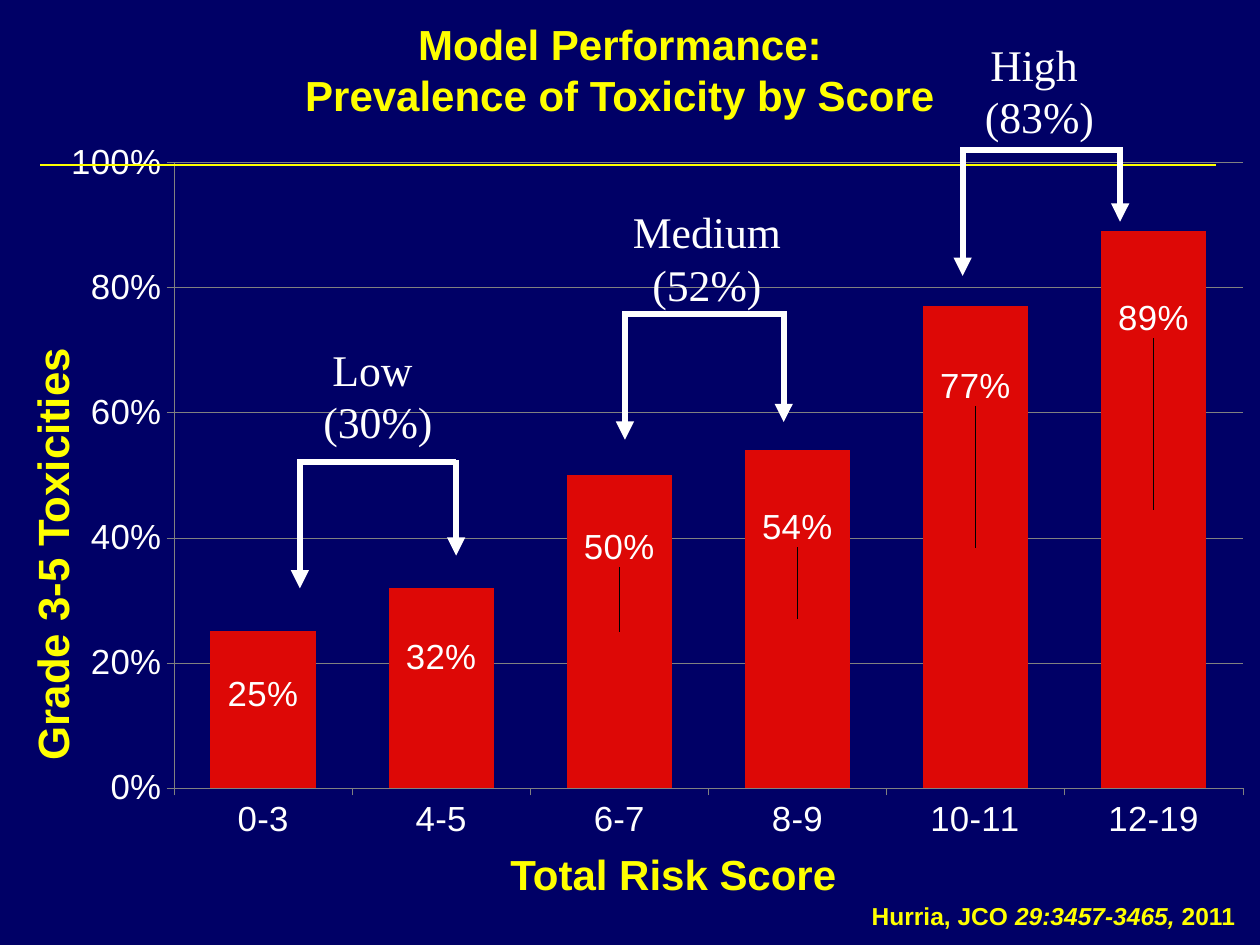
from lxml.etree import SubElement
from pptx import Presentation
from pptx.chart.data import CategoryChartData
from pptx.dml.color import RGBColor
from pptx.enum.chart import XL_CHART_TYPE, XL_LABEL_POSITION, XL_TICK_MARK
from pptx.enum.shapes import MSO_CONNECTOR
from pptx.enum.text import MSO_ANCHOR, MSO_AUTO_SIZE, PP_ALIGN
from pptx.oxml import parse_xml
from pptx.oxml.ns import nsdecls, qn
from pptx.util import Inches, Pt

COLORS = {"back": "000066", "head": "FFFF00", "text": "FFFFFF",
          "bar": "DD0806", "grid": "808080"}
HEAD = {"name": "Arial", "size": Pt(24), "bold": True}
AXIS = {"name": "Arial", "size": Pt(19.9), "bold": False}
RISK = {"name": "Times New Roman", "size": Pt(25)}

# score, share with toxicity, label shift as a share of chart height
SCORES = [("0-3", 0.25, -0.02), ("4-5", 0.32, -0.04), ("6-7", 0.5, -0.11),
          ("8-9", 0.54, -0.12), ("10-11", 0.77, -0.21), ("12-19", 0.89, -0.25)]

# text, text box, bracket corner (left, top), right end, lengths of both arrows
GROUPS = [("Low \v(30%)", (2, 2.67, 2, 0.94), (2.38, 3.67), 3.62, (1, 0.74)),
          ("Medium (52%)", (4.75, 1.58, 1.72, 0.94), (4.96, 2.49), 6.22, (1, 0.86)),
          ("High \v(83%)", (7.25, 0.25, 2, 0.94), (7.64, 1.19), 8.89, (1, 0.57))]


def rgb(key):
    return RGBColor.from_string(COLORS[key])


def style(font, form, color):
    for name, value in form.items():
        setattr(font, name, value)
    font.color.rgb = rgb(color)


def add_text(shapes, box, runs, form, color, align=PP_ALIGN.CENTER, anchor=MSO_ANCHOR.TOP):
    """Add a text box; runs are pairs of text and italic."""
    shape = shapes.add_textbox(*map(Inches, box))
    frame = shape.text_frame
    frame.word_wrap = True
    frame.auto_size = MSO_AUTO_SIZE.SHAPE_TO_FIT_TEXT
    frame.vertical_anchor = anchor
    para = frame.paragraphs[0]
    para.alignment = align
    for text, slant in runs:
        for part, piece in enumerate(text.split("\v")):
            if part:
                para.add_line_break()
            run = para.add_run()
            run.text = piece
            style(run.font, {**form, "italic": slant}, color)
    return shape


def add_line(shapes, start, end, color, width, arrow=False):
    line = shapes.add_connector(MSO_CONNECTOR.STRAIGHT, *map(Inches, (*start, *end)))
    line.line.color.rgb = rgb(color)
    line.line.width = Pt(width)
    if arrow:
        SubElement(line.line._get_or_add_ln(), qn("a:tailEnd"), type="triangle")
    SubElement(line._element.spPr, qn("a:effectLst"))


def layout(target=None, **spots):
    """Make a manual chart layout."""
    inner = f'<c:layoutTarget val="{target}"/>' if target else ""
    if target:
        inner += '<c:xMode val="edge"/><c:yMode val="edge"/>'
    inner += "".join(f'<c:{key} val="{val}"/>' for key, val in spots.items())
    return parse_xml(f'<c:layout {nsdecls("c")}><c:manualLayout>{inner}'
                     '</c:manualLayout></c:layout>')


def add_title(slide, box):
    title = slide.shapes.title
    title.left, title.top, title.width, title.height = map(Inches, box)
    frame = title.text_frame
    frame.text = "Model Performance:\nPrevalence of Toxicity by Score"
    frame.auto_size = MSO_AUTO_SIZE.NONE
    frame.vertical_anchor = MSO_ANCHOR.MIDDLE
    for para in frame.paragraphs:
        para.alignment = PP_ALIGN.CENTER
        style(para.runs[0].font, HEAD, "head")


def add_bars(slide, box):
    data = CategoryChartData(number_format="0%")
    data.categories = [name for name, _, _ in SCORES]
    data.add_series("Series 1", [share for _, share, _ in SCORES])
    chart = slide.shapes.add_chart(XL_CHART_TYPE.COLUMN_STACKED,
                                   *map(Inches, box), data).chart
    chart.has_legend = chart.has_title = False
    style(chart.font, AXIS, "text")
    area = chart._chartSpace.chart.plotArea
    for old in area.findall(qn("c:layout")):
        area.remove(old)
    area.insert(0, layout("inner", x=0.116, y=0.048, w=0.869, h=0.819))

    for axis in (chart.category_axis, chart.value_axis):
        style(axis.tick_labels.font, AXIS, "text")
        axis.major_tick_mark = XL_TICK_MARK.OUTSIDE
        axis.minor_tick_mark = XL_TICK_MARK.NONE
        axis.format.line.color.rgb = rgb("grid")
        axis.format.line.width = Pt(0.25)
    scale = chart.value_axis
    scale.minimum_scale, scale.maximum_scale, scale.major_unit = 0, 1, 0.2
    scale.tick_labels.number_format = "0%"
    scale.tick_labels.number_format_is_linked = False
    grid = scale.major_gridlines.format.line
    grid.color.rgb = rgb("grid")
    grid.width = Pt(0.25)

    plot = chart.plots[0]
    plot.gap_width, plot.overlap, plot.vary_by_categories = 69, 100, False
    bars = plot.series[0]
    bars.format.fill.solid()
    bars.format.fill.fore_color.rgb = rgb("bar")
    labels = bars.data_labels
    labels.show_value = True
    labels.number_format = "0%"
    labels.number_format_is_linked = False
    style(labels.font, AXIS, "text")
    for spot, (_, _, shift) in enumerate(SCORES):
        label = bars.points[spot].data_label
        style(label.font, AXIS, "text")
        label.position = XL_LABEL_POSITION.CENTER
    for item, (_, _, shift) in zip(labels._element.findall(qn("c:dLbl")), SCORES):
        item.insert(1, layout(x=0, y=shift))


def add_group(slide, text, box, corner, right, drops):
    """Add a risk group: its text above a bracket with two arrows."""
    shapes = slide.shapes.add_group_shape().shapes
    left, top = corner
    for x, drop in zip((left, right), drops):
        add_line(shapes, (x, top - 0.02), (x, top + drop), "text", 3.5, True)
    add_line(shapes, (left - 0.02, top), (right, top), "text", 3.5)
    add_text(shapes, box, [(text, False)], RISK, "text")


def main():
    deck = Presentation()
    deck.slide_width, deck.slide_height = Inches(10), Inches(7.5)
    slide = deck.slides.add_slide(deck.slide_layouts[5])
    slide.background.fill.solid()
    slide.background.fill.fore_color.rgb = rgb("back")
    add_bars(slide, (0.25, 1, 9.76, 6.06))
    add_title(slide, (0.42, 0.17, 9, 0.76))
    side = add_text(slide.shapes, (-1.66, 4.09, 4.14, 0.52),
                    [("Grade 3-5 Toxicities ", False)], {**HEAD, "size": Pt(25)},
                    "head", anchor=MSO_ANCHOR.MIDDLE)
    side.rotation = 270
    add_text(slide.shapes, (3.58, 6.67, 3.53, 0.52), [("Total Risk Score", False)],
             HEAD, "head", anchor=MSO_ANCHOR.MIDDLE)
    add_line(slide.shapes, (0.32, 1.31), (9.65, 1.31), "head", 0.75)
    for group in GROUPS:
        add_group(slide, *group)
    add_text(slide.shapes, (6.23, 7.1, 3.67, 0.34),
             [("Hurria, JCO ", False), ("29:3457-3465,", True), (" 2011", False)],
             {**HEAD, "size": Pt(14)}, "head", PP_ALIGN.RIGHT)
    deck.save("out.pptx")


if __name__ == "__main__":
    main()
